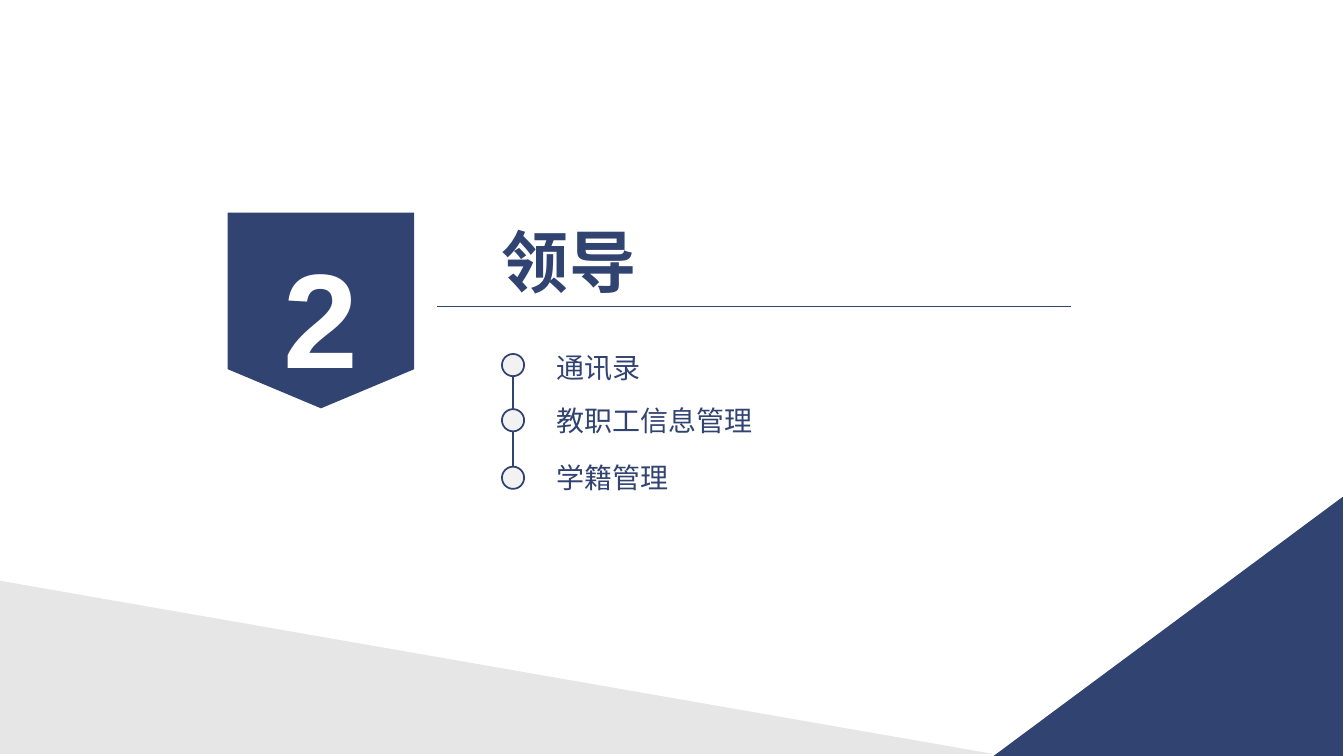
from lxml.etree import SubElement
from pptx import Presentation
from pptx.dml.color import RGBColor
from pptx.enum.shapes import MSO_CONNECTOR, MSO_SHAPE
from pptx.enum.text import MSO_ANCHOR, MSO_AUTO_SIZE, PP_ALIGN
from pptx.oxml.ns import qn
from pptx.util import Cm, Pt

NAVY = "314371"
PALE_GREY = "F2F2F2"
LIGHT_GREY = "E7E6E6"
WHITE = "FFFFFF"
CHINESE_FONT = "Noto Sans CJK SC"

# Each topic with the top of its text box and of its dot, in cm
TOPICS = [
    ("通讯录", 8.66, 8.92),
    ("教职工信息管理", 9.98, 10.31),
    ("学籍管理", 11.43, 11.76),
]
DOT_LEFT = 12.65
DOT_SIZE = 0.56


def colour(value):
    return RGBColor.from_string(value)


def paint(shape, fill, line=None):
    shape.shadow.inherit = False
    shape.fill.solid()
    shape.fill.fore_color.rgb = colour(fill)
    if line:
        shape.line.color.rgb = colour(line)
        shape.line.width = Pt(1.25)
    else:
        shape.line.fill.background()


def add_span(para, text, size, font, value, bold=False):
    """Add a run whose font also applies to East Asian characters."""
    span = para.add_run()
    span.text = text
    span.font.size = Pt(size)
    span.font.name = font
    span.font.bold = bold
    span.font.color.rgb = colour(value)
    SubElement(span.font._element, qn("a:ea"), typeface=font)


def add_text(page, text, left, top, width, height, size, bold=False,
             wrap=True, insets=(0.25, 0.13)):
    box = page.shapes.add_textbox(Cm(left), Cm(top), Cm(width), Cm(height))
    frame = box.text_frame
    frame.word_wrap = wrap
    frame.auto_size = MSO_AUTO_SIZE.SHAPE_TO_FIT_TEXT
    frame.margin_left = frame.margin_right = Cm(insets[0])
    frame.margin_top = frame.margin_bottom = Cm(insets[1])
    add_span(frame.paragraphs[0], text, size, CHINESE_FONT, NAVY, bold)


def add_line(page, start, end, width):
    line = page.shapes.add_connector(
        MSO_CONNECTOR.STRAIGHT, *(Cm(value) for value in start + end))
    line.line.color.rgb = colour(NAVY)
    line.line.width = Pt(width)
    SubElement(line._element.spPr, qn("a:effectLst"))


def add_triangle(page, corners, fill):
    first, *others = [(Cm(x), Cm(y)) for x, y in corners]
    builder = page.shapes.build_freeform(*first)
    builder.add_line_segments(others, close=True)
    paint(builder.convert_to_shape(), fill)


def add_number_badge(page, number):
    badge = page.shapes.add_shape(
        MSO_SHAPE.FLOWCHART_OFFPAGE_CONNECTOR,
        Cm(5.74), Cm(5.36), Cm(4.7), Cm(4.93))
    paint(badge, NAVY)
    badge.text_frame.vertical_anchor = MSO_ANCHOR.MIDDLE
    para = badge.text_frame.paragraphs[0]
    para.alignment = PP_ALIGN.CENTER
    para.line_spacing = 1.3
    add_span(para, number, 96, "Arial", WHITE, bold=True)


def add_dot(page, top):
    dot = page.shapes.add_shape(
        MSO_SHAPE.OVAL, Cm(DOT_LEFT), Cm(top), Cm(DOT_SIZE), Cm(DOT_SIZE))
    paint(dot, PALE_GREY, NAVY)


def main():
    deck = Presentation()
    deck.slide_width = Cm(33.87)
    deck.slide_height = Cm(19.05)
    page = deck.slides.add_slide(deck.slide_layouts[6])

    add_number_badge(page, "2")
    add_line(page, (11.02, 7.72), (27, 7.72), 1)
    add_text(page, "领导", 12.4, 5.41, 3.89, 2.31, 48, bold=True, wrap=False)

    dot_centre = DOT_LEFT + DOT_SIZE / 2
    add_line(page, (dot_centre, 9.35), (dot_centre, 12.32), 1.25)
    for topic, text_top, dot_top in TOPICS:
        add_dot(page, dot_top)
        add_text(page, topic, 13.69, text_top, 8.89, 1.19, 20,
                 insets=(0.33, 0.18))

    add_triangle(page, [(-0.03, 19), (-0.03, 14.63), (25.04, 19)], LIGHT_GREY)
    add_triangle(page, [(33.84, 19.05), (33.84, 12.52), (25.04, 19.05)], NAVY)

    deck.save("out.pptx")


if __name__ == "__main__":
    main()
